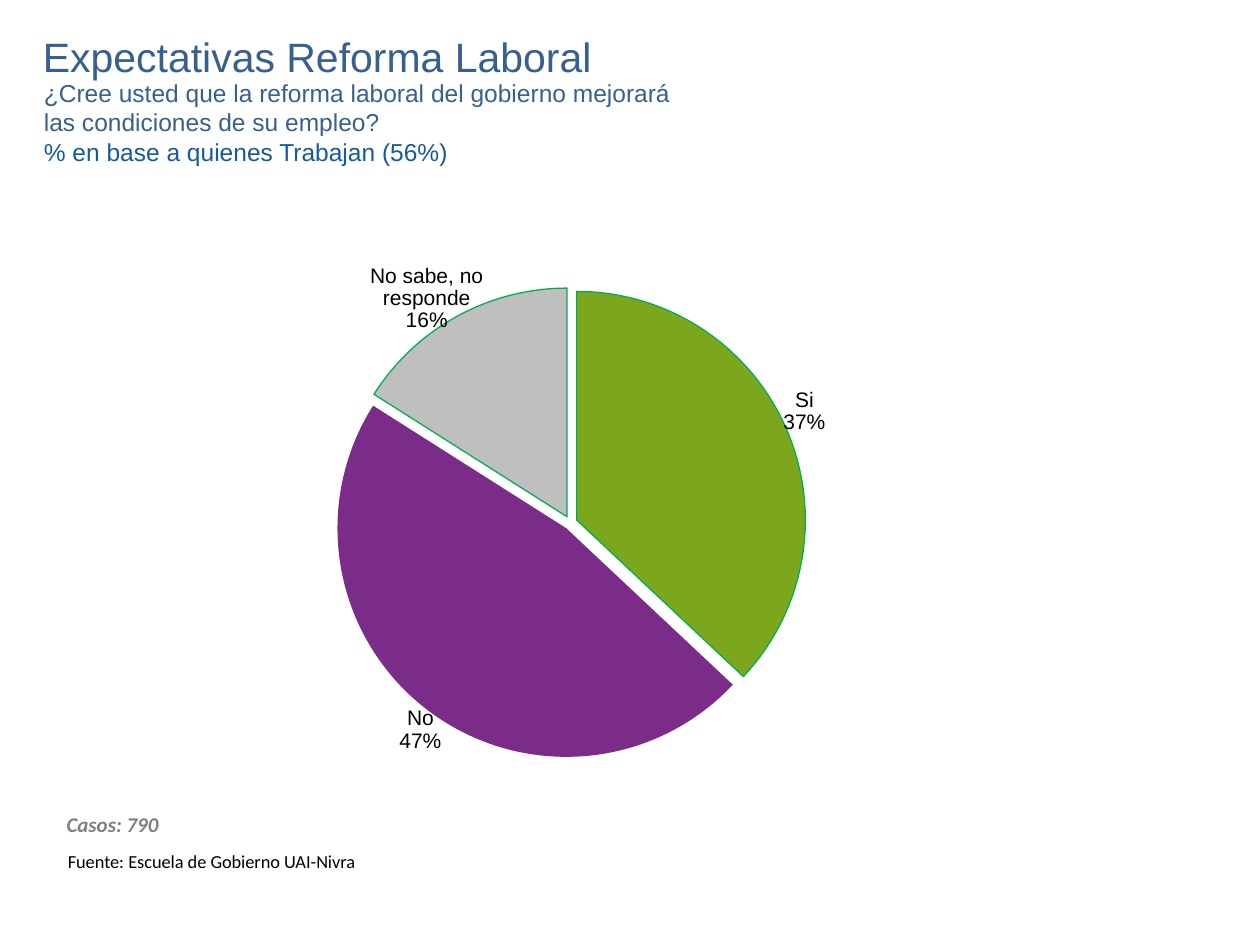
from copy import deepcopy

from lxml.etree import SubElement
from pptx import Presentation
from pptx.chart.data import CategoryChartData
from pptx.dml.color import RGBColor
from pptx.enum.chart import XL_CHART_TYPE, XL_LABEL_POSITION
from pptx.enum.text import MSO_ANCHOR, MSO_AUTO_SIZE, PP_ALIGN
from pptx.oxml import parse_xml
from pptx.oxml.ns import nsdecls, qn
from pptx.util import Inches, Pt

W, H = Inches(10), Inches(7.5)
BLUE, DEEP_BLUE, GREEN_LINE = "376092", "1559A2", "00B050"
ANSWERS = [
    ("Si", 37, "7CA71D", (-0.01, 0.01)),
    ("No", 47, "7B2C88", (0.02, -0.01)),
    ("No sabe, no responde", 16, "BFBFBF", (0.03, 0.03)),
]


def rgb(value):
    return RGBColor.from_string(value)


def shares(x, y, w, h):
    return int(x * W), int(y * H), int(w * W), int(h * H)


def style(font, name, size, color, bold=False, italic=False):
    font.name, font.size, font.color.rgb = name, Pt(size), rgb(color)
    font.bold, font.italic = bold, italic


def add_title(s, box, text):
    sp = s.shapes.title
    sp.left, sp.top, sp.width, sp.height = box
    tf = sp.text_frame
    tf.text = text
    tf.auto_size = MSO_AUTO_SIZE.NONE
    tf.vertical_anchor = MSO_ANCHOR.MIDDLE
    p = tf.paragraphs[0]
    p.alignment = PP_ALIGN.LEFT
    style(p.font, "Arial", 23.4, BLUE)


def add_text(s, box, lines, font, size, wrap=False, **emphasis):
    tf = s.shapes.add_textbox(*box).text_frame
    tf.word_wrap = wrap
    tf.auto_size = MSO_AUTO_SIZE.SHAPE_TO_FIT_TEXT
    tf.text = "\n".join(text for text, _ in lines)
    for p, (_, color) in zip(tf.paragraphs, lines):
        style(p.font, font, size, color, **emphasis)


def add_layout(parent, **values):
    layout = SubElement(parent, qn("c:layout"))
    manual = SubElement(layout, qn("c:manualLayout"))
    for tag, value in values.items():
        SubElement(manual, qn(f"c:{tag}")).set("val", str(value))
    return layout


def label_answers(series):
    labels = series.data_labels
    style(labels.font, "Arial", 12, "000000")
    labels.number_format, labels.number_format_is_linked = "0%", False
    labels.position = XL_LABEL_POSITION.OUTSIDE_END
    labels.show_value = False
    labels.show_category_name = labels.show_percentage = True
    root = series._element.find(qn("c:dLbls"))
    separator = parse_xml(f"<c:separator {nsdecls('c')}>\n</c:separator>")
    root.find(qn("c:showBubbleSize")).addnext(separator)
    shared = [e for e in root if e.tag != qn("c:showLeaderLines")]
    for i, (_, _, _, (dx, dy)) in enumerate(ANSWERS):
        label = parse_xml(f'<c:dLbl {nsdecls("c")}><c:idx val="{i}"/></c:dLbl>')
        add_layout(label, x=dx, y=dy)
        label.extend(deepcopy(shared))
        root.insert(i, label)


def add_pie(s, box):
    data = CategoryChartData()
    data.categories = [name for name, *_ in ANSWERS]
    data.add_series("Series 1", [value for _, value, *_ in ANSWERS])
    chart = s.shapes.add_chart(XL_CHART_TYPE.PIE, *box, data).chart
    chart.has_title = chart.has_legend = False
    style(chart.font, "Calibri", 18, "000000")
    area = chart._chartSpace.chart.plotArea
    for old in area.findall(qn("c:layout")):
        area.remove(old)
    area.insert(0, add_layout(area, layoutTarget="inner", xMode="edge", yMode="edge",
                              x=0.12, y=0.21, w=0.67, h=0.65))
    series = chart.plots[0].series[0]
    series.format.line.color.rgb = rgb(GREEN_LINE)
    series.format.line.width = Pt(0.75)
    explosion = parse_xml(f'<c:explosion {nsdecls("c")} val="3"/>')
    series._element.find(qn("c:spPr")).addnext(explosion)
    for i, (name, _, color, _) in enumerate(ANSWERS):
        fmt = series.points[i].format
        fmt.fill.solid()
        fmt.fill.fore_color.rgb = rgb(color)
        if name == "No":
            fmt.line.fill.background()
        else:
            fmt.line.color.rgb = rgb(GREEN_LINE)
            fmt.line.width = Pt(0.75)
    label_answers(series)


def main():
    prs = Presentation()
    prs.slide_width, prs.slide_height = W, H
    s = prs.slides.add_slide(prs.slide_layouts[5])
    add_text(s, shares(0.025, 0.076, 0.853, 0.108), [
        ("¿Cree usted que la reforma laboral del gobierno mejorará", BLUE),
        ("las condiciones de su empleo?", BLUE),
        ("% en base a quienes Trabajan (56%)", DEEP_BLUE),
    ], "Arial", 14, wrap=True)
    add_title(s, shares(0.024, 0.017, 0.807, 0.085), "Expectativas Reforma Laboral")
    add_pie(s, shares(0.091, 0.143, 0.795, 0.767))
    add_text(s, shares(0.043, 0.852, 0.098, 0.04), [("Casos: 790", "808080")],
             "Calibri", 12, bold=True, italic=True)
    add_text(s, shares(0.044, 0.893, 0.263, 0.037),
             [("Fuente: Escuela de Gobierno UAI-Nivra", "000000")], "Calibri", 10.5)
    prs.save("out.pptx")


if __name__ == "__main__":
    main()
